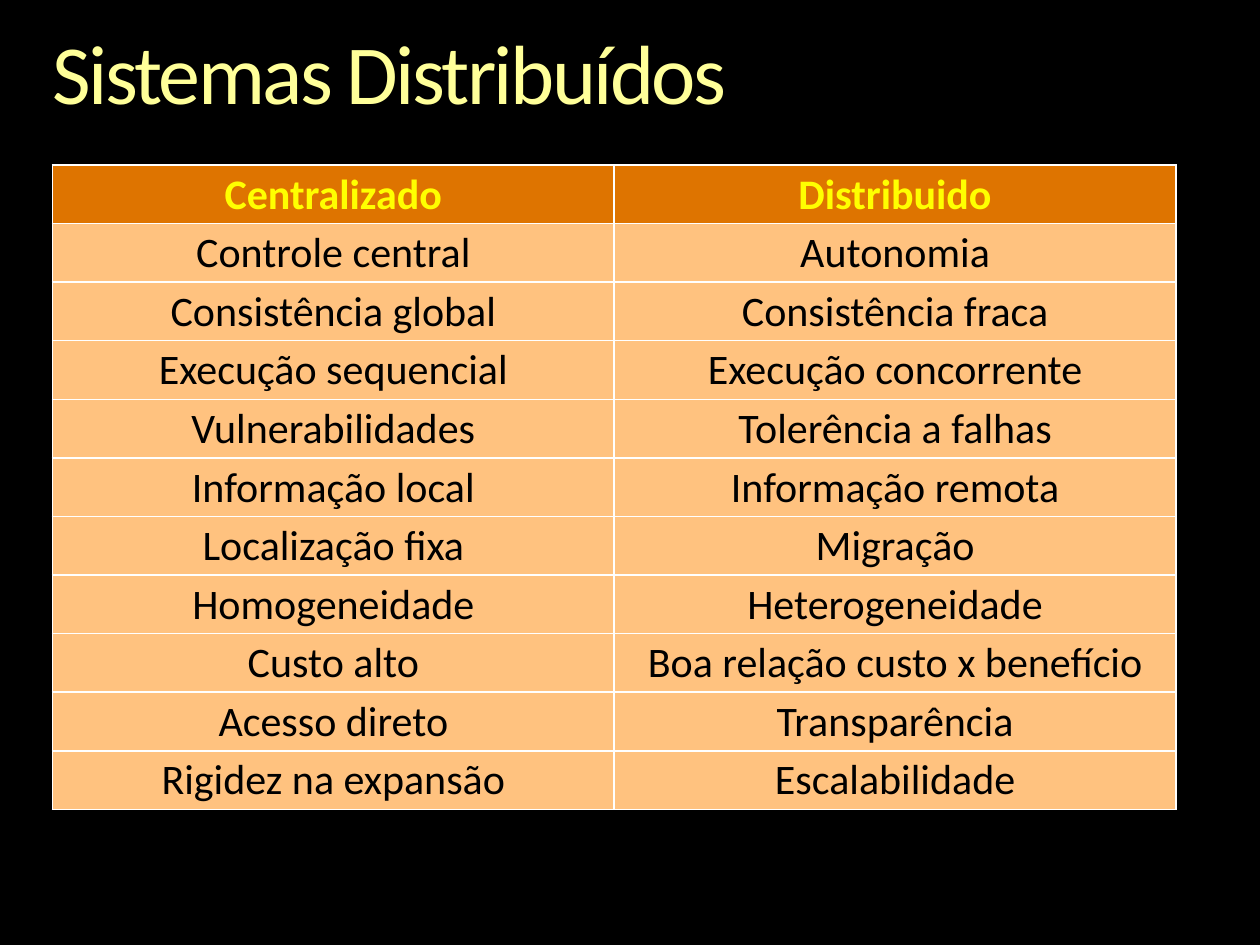
import pptx
import pptx.dml.color
import pptx.enum.text
import pptx.oxml
import pptx.oxml.ns
import pptx.util

BLACK = pptx.dml.color.RGBColor(0x00, 0x00, 0x00)
WHITE = pptx.dml.color.RGBColor(0xFF, 0xFF, 0xFF)
PALE_YELLOW = pptx.dml.color.RGBColor(0xFF, 0xFF, 0x99)
YELLOW = pptx.dml.color.RGBColor(0xFF, 0xFF, 0x00)
DARK_ORANGE = pptx.dml.color.RGBColor(0xDE, 0x74, 0x00)
LIGHT_ORANGE = pptx.dml.color.RGBColor(0xFF, 0xC2, 0x7F)

FONT_NAME = "Calibri"
LEFT = 30
COLUMN_WIDTH = 321
ROW_HEIGHT = 33.5
COMPARISON = [
    ("Centralizado", "Distribuido"),
    ("Controle central", "Autonomia"),
    ("Consistência global", "Consistência fraca"),
    ("Execução sequencial", "Execução concorrente"),
    ("Vulnerabilidades", "Tolerência a falhas"),
    ("Informação local", "Informação remota"),
    ("Localização fixa", "Migração"),
    ("Homogeneidade", "Heterogeneidade"),
    ("Custo alto", "Boa relação custo x benefício"),
    ("Acesso direto", "Transparência"),
    ("Rigidez na expansão", "Escalabilidade"),
]


def format_run(run, size, color, bold=False):
    run.font.name = FONT_NAME
    run.font.size = pptx.util.Pt(size)
    run.font.bold = bold
    run.font.color.rgb = color


def add_title(slide, text):
    shape = slide.shapes.add_textbox(
        pptx.util.Pt(LEFT), pptx.util.Pt(18), pptx.util.Pt(660), pptx.util.Pt(70)
    )
    text_frame = shape.text_frame
    text_frame.word_wrap = True
    text_frame.margin_left = text_frame.margin_right = 0
    text_frame.margin_top = text_frame.margin_bottom = 0
    text_frame.text = text
    paragraph = text_frame.paragraphs[0]
    paragraph.line_spacing = 0.9
    run = paragraph.runs[0]
    format_run(run, 48, PALE_YELLOW)
    run.font._element.set("spc", "-150")


def set_borders(cell, color, width):
    properties = cell._tc.get_or_add_tcPr()
    namespace = pptx.oxml.ns.nsdecls("a")
    for position, side in enumerate(("lnL", "lnR", "lnT", "lnB")):
        border = pptx.oxml.parse_xml(
            f'<a:{side} {namespace} w="{pptx.util.Pt(width)}">'
            f'<a:solidFill><a:srgbClr val="{color}"/></a:solidFill></a:{side}>'
        )
        properties.insert(position, border)


def fill_cell(cell, text, is_header):
    cell.margin_left = cell.margin_right = cell.margin_top = pptx.util.Pt(0.75)
    cell.margin_bottom = 0
    cell.vertical_anchor = pptx.enum.text.MSO_ANCHOR.MIDDLE
    cell.fill.solid()
    cell.fill.fore_color.rgb = DARK_ORANGE if is_header else LIGHT_ORANGE
    set_borders(cell, WHITE, 1)
    cell.text_frame.text = text
    paragraph = cell.text_frame.paragraphs[0]
    paragraph.alignment = pptx.enum.text.PP_ALIGN.CENTER
    format_run(paragraph.runs[0], 24, YELLOW if is_header else BLACK, is_header)


def add_comparison_table(slide, rows):
    column_count = len(rows[0])
    table = slide.shapes.add_table(
        len(rows),
        column_count,
        pptx.util.Pt(LEFT),
        pptx.util.Pt(94.25),
        pptx.util.Pt(COLUMN_WIDTH * column_count),
        pptx.util.Pt(ROW_HEIGHT * len(rows)),
    ).table
    table.horz_banding = False
    for column in table.columns:
        column.width = pptx.util.Pt(COLUMN_WIDTH)
    for row_index, texts in enumerate(rows):
        table.rows[row_index].height = pptx.util.Pt(ROW_HEIGHT)
        for column_index, text in enumerate(texts):
            fill_cell(table.cell(row_index, column_index), text, row_index == 0)


def main():
    presentation = pptx.Presentation()
    presentation.slide_width = pptx.util.Pt(720)
    presentation.slide_height = pptx.util.Pt(540)
    slide = presentation.slides.add_slide(presentation.slide_layouts[6])
    slide.background.fill.solid()
    slide.background.fill.fore_color.rgb = BLACK
    add_title(slide, "Sistemas Distribuídos")
    add_comparison_table(slide, COMPARISON)
    presentation.save("out.pptx")


if __name__ == "__main__":
    main()
